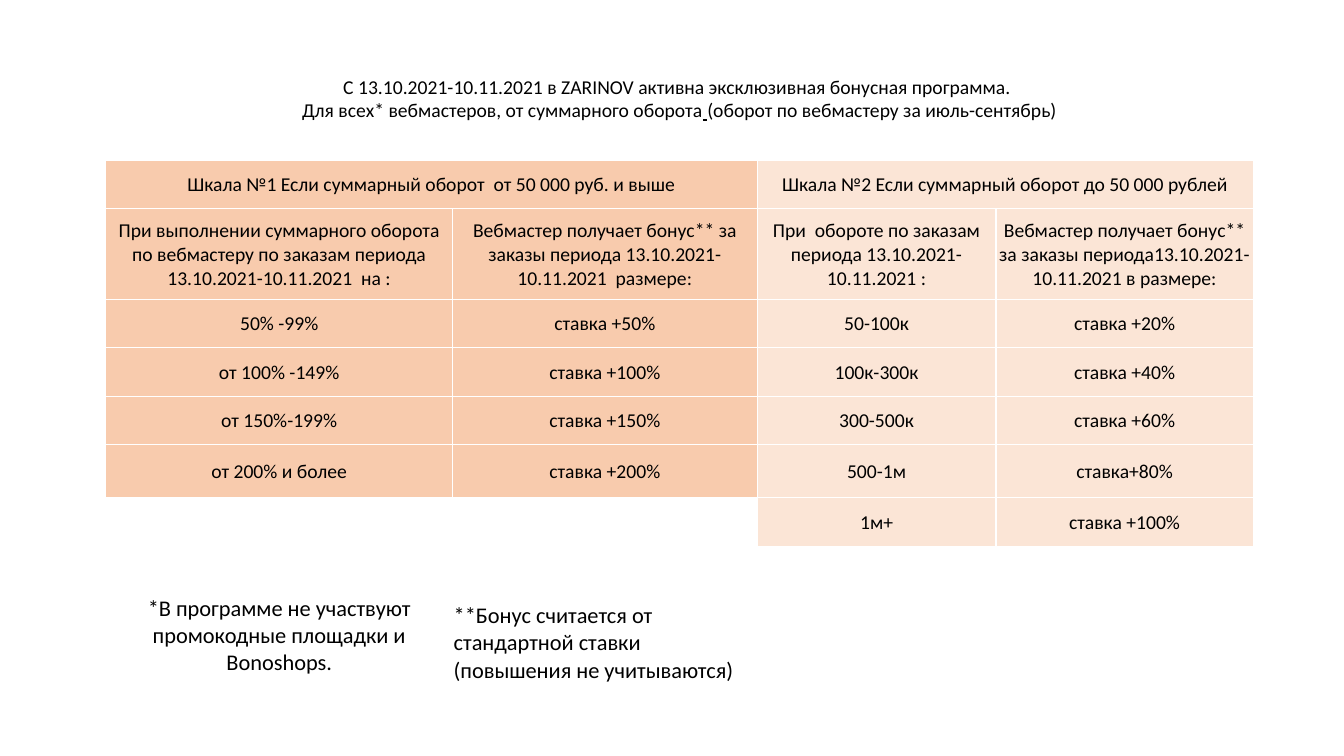
from lxml import etree
from pptx import Presentation, util as u
from pptx.dml.color import RGBColor
from pptx.enum import text
from pptx.oxml import ns

WHITE = RGBColor(0xFF, 0xFF, 0xFF)
BLACK = RGBColor(0, 0, 0)
PEACH = RGBColor(0xF8, 0xCB, 0xAD)
CREAM = RGBColor(0xFB, 0xE5, 0xD6)

# The slide is measured on a fine grid of 1333 columns by 750 rows.
GRID_COLUMNS, GRID_ROWS = 1333, 750
SCALE_WIDTHS = [344, 302, 237, 255]
ROW_HEIGHTS = [122, 48, 90, 48, 48, 48, 53, 48, 40, 97]

INTRO = [
    [("C 13.10.2021-10.11.2021 в ZARINOV активна эксклюзивная бонусная программа. ", {})],
    [("Для всех* вебмастеров, от суммарного оборота", {}),
     (" ", {"underline": True}),
     ("(оборот по вебмастеру за июль-сентябрь)", {})],
]
SCALE_TITLES = [
    "Шкала №1 Если суммарный оборот  от 50 000 руб. и выше",
    "Шкала №2 Если суммарный оборот до 50 000 рублей",
]
SCALE_ROWS = [
    ["При выполнении суммарного оборота по вебмастеру по заказам периода "
     "13.10.2021-10.11.2021  на :",
     "Вебмастер получает бонус** за заказы периода 13.10.2021-10.11.2021  размере:",
     "При  обороте по заказам периода 13.10.2021-10.11.2021 :",
     "Вебмастер получает бонус** за заказы периода13.10.2021-10.11.2021 в размере:"],
    ["50% -99%", "ставка +50%", "50-100к", "ставка +20%"],
    ["от 100% -149%", "ставка +100%", "100к-300к", "ставка +40%"],
    ["от 150%-199%", "ставка +150%", "300-500к", "ставка +60%"],
    ["от 200% и более", "ставка +200%", "500-1м", "ставка+80%"],
    ["", "", "1м+", "ставка +100%"],
]
AUDIENCE_NOTE = "*В программе не участвуют промокодные площадки и Bonoshops."
BONUS_NOTE = "**Бонус считается от стандартной ставки (повышения не учитываются)"


def apply(target, values):
    for name, value in values.items():
        setattr(target, name, value)


class BonusSlide:
    FONT = {"name": "Calibri", "size": u.Pt(14)}
    CELL = {"margin_left": u.Inches(0.01), "margin_right": u.Inches(0.01),
            "margin_top": u.Inches(0.01), "margin_bottom": 0,
            "vertical_anchor": text.MSO_ANCHOR.MIDDLE}

    def __init__(self, deck):
        self.slide = deck.slides.add_slide(deck.slide_layouts[6])
        self.column = deck.slide_width / GRID_COLUMNS
        self.row = deck.slide_height / GRID_ROWS
        fill = self.slide.background.fill
        fill.solid()
        fill.fore_color.rgb = WHITE

    def table(self, left, top, widths, heights):
        frame = self.slide.shapes.add_table(
            len(heights), len(widths),
            int(left * self.column), int(top * self.row),
            int(sum(widths) * self.column), int(sum(heights) * self.row))
        grid = frame.table
        apply(grid, {"first_row": False, "horz_banding": False})
        for column, width in zip(grid.columns, widths):
            column.width = int(width * self.column)
        for row, height in zip(grid.rows, heights):
            row.height = int(height * self.row)
        for cell in grid.iter_cells():
            apply(cell, self.CELL)
            self.borders(cell)
            self.paint(cell, WHITE)
        return grid

    def borders(self, cell):
        properties = cell._tc.get_or_add_tcPr()
        for side in ("lnL", "lnR", "lnT", "lnB"):
            line = etree.SubElement(properties, ns.qn(f"a:{side}"), w=str(u.Pt(1)))
            solid = etree.SubElement(line, ns.qn("a:solidFill"))
            etree.SubElement(solid, ns.qn("a:srgbClr"), val=str(WHITE))

    def paint(self, cell, color):
        cell.fill.solid()
        cell.fill.fore_color.rgb = color

    def label(self, cell, paragraphs, align=text.PP_ALIGN.CENTER, **font):
        """Fill a cell with a plain string or with lists of (words, font values)."""
        if isinstance(paragraphs, str):
            paragraphs = [[(paragraphs, {})]]
        frame = cell.text_frame
        for index, runs in enumerate(paragraphs):
            paragraph = frame.add_paragraph() if index else frame.paragraphs[0]
            paragraph.alignment = align
            for words, values in runs:
                run = paragraph.add_run()
                run.text = words
                apply(run.font, {**self.FONT, **font, **values})
                run.font.color.rgb = BLACK


def main():
    deck = Presentation()
    apply(deck, {"slide_width": u.Inches(13.33), "slide_height": u.Inches(7.5)})
    page = BonusSlide(deck)
    program = page.table(105, 37, SCALE_WIDTHS, ROW_HEIGHTS)

    intro = program.cell(0, 0)
    intro.merge(program.cell(0, 3))
    page.label(intro, INTRO)

    for scale, (title, color) in enumerate(zip(SCALE_TITLES, (PEACH, CREAM))):
        heading = program.cell(1, 2 * scale)
        heading.merge(program.cell(1, 2 * scale + 1))
        page.paint(heading, color)
        page.label(heading, title)

    for row, entries in enumerate(SCALE_ROWS, start=2):
        for column, entry in enumerate(entries):
            if entry:
                cell = program.cell(row, column)
                page.paint(cell, PEACH if column < 2 else CREAM)
                page.label(cell, entry)

    page.label(program.cell(9, 0), AUDIENCE_NOTE, size=u.Pt(16))
    bonus = program.cell(9, 1)
    bonus.vertical_anchor = text.MSO_ANCHOR.BOTTOM
    page.label(bonus, BONUS_NOTE, text.PP_ALIGN.LEFT, size=u.Pt(16))
    deck.save("out.pptx")


if __name__ == "__main__":
    main()
